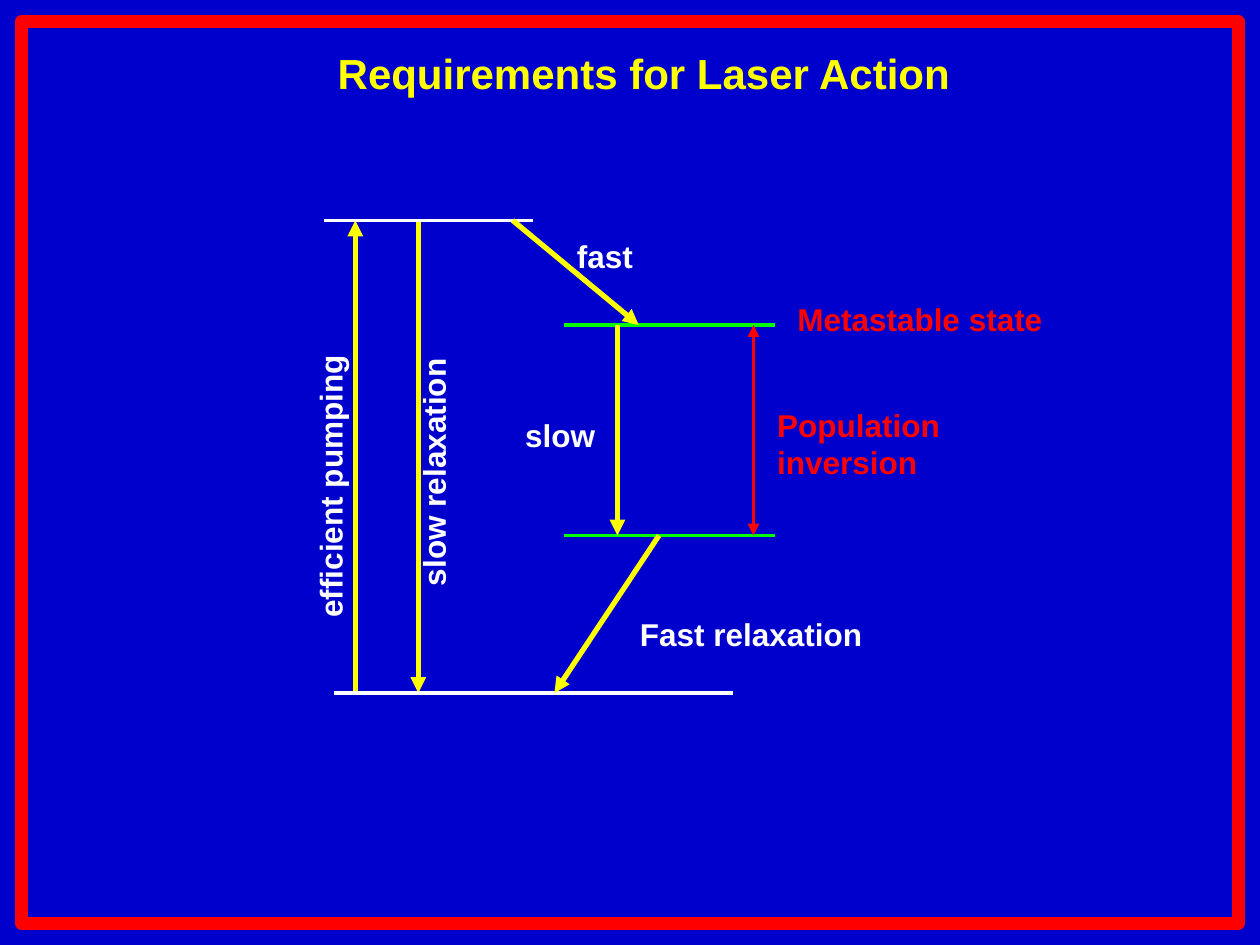
"""Build the slide on the requirements for laser action."""
from dataclasses import dataclass

from pptx import Presentation
from pptx.dml.color import RGBColor
from pptx.enum.shapes import MSO_CONNECTOR, MSO_SHAPE
from pptx.enum.text import MSO_ANCHOR, MSO_AUTO_SIZE, PP_ALIGN
from pptx.oxml.ns import qn
from pptx.util import Inches, Pt
from lxml.etree import SubElement


@dataclass(frozen=True)
class Theme:
    """Colours, font and sizes of the slide."""
    background: str = "0000CC"
    accent: str = "FFFF00"
    plain: str = "FFFFFF"
    laser: str = "00FF00"
    alert: str = "FF0000"
    font: str = "Arial"
    title_size: float = 24
    label_size: float = 18
    arrow_width: float = 3
    level_width: float = 2.25
    frame_width: float = 7


def write_text(frame, text, *, font, size, color):
    """Fill a text frame with one bold, left-aligned paragraph."""
    frame.word_wrap = True
    frame.auto_size = MSO_AUTO_SIZE.NONE
    frame.vertical_anchor = MSO_ANCHOR.TOP
    paragraph = frame.paragraphs[0]
    paragraph.alignment = PP_ALIGN.LEFT
    run = paragraph.add_run()
    run.text = text
    run.font.name = font
    run.font.size = Pt(size)
    run.font.bold = True
    run.font.color.rgb = RGBColor.from_string(color)


class EnergyDiagram:
    """Draws the elements of the diagram in one style."""

    def __init__(self, slide, theme):
        """Keep the slide and the theme, and paint the background."""
        self.slide = slide
        self.theme = theme
        fill = slide.background.fill
        fill.solid()
        fill.fore_color.rgb = RGBColor.from_string(theme.background)

    def title(self, text, left, top, width, height):
        """Place and fill the title placeholder."""
        title = self.slide.shapes.title
        title.left, title.top = Inches(left), Inches(top)
        title.width, title.height = Inches(width), Inches(height)
        write_text(title.text_frame, text, font=self.theme.font,
                   size=self.theme.title_size, color=self.theme.accent)

    def label(self, text, left, top, width, height=0.4, color=None, rotation=0):
        """Add a text label."""
        label = self.slide.shapes.add_textbox(
            Inches(left), Inches(top), Inches(width), Inches(height))
        label.rotation = rotation
        write_text(label.text_frame, text, font=self.theme.font,
                   size=self.theme.label_size, color=color or self.theme.plain)

    def line(self, start, end, color, width, heads=()):
        """Add a straight line with triangles at the named ends."""
        line = self.slide.shapes.add_connector(
            MSO_CONNECTOR.STRAIGHT, *map(Inches, start + end))
        line.line.color.rgb = RGBColor.from_string(color)
        line.line.width = Pt(width)
        properties = line.line._get_or_add_ln()
        for head in heads:
            SubElement(properties, qn(f"a:{head}"), type="triangle")
        SubElement(line._element.spPr, qn("a:effectLst"))

    def level(self, left, right, height, color):
        """Add a horizontal energy level."""
        self.line((left, height), (right, height), color, self.theme.level_width)

    def transition(self, start, end):
        """Add an arrow from one level to another."""
        self.line(start, end, self.theme.accent, self.theme.arrow_width, ("tailEnd",))

    def frame(self, margin, page_width, page_height):
        """Add the outline around the page."""
        border = self.slide.shapes.add_shape(
            MSO_SHAPE.RECTANGLE, Inches(margin), Inches(margin),
            Inches(page_width - 2 * margin), Inches(page_height - 2 * margin))
        border.shadow.inherit = False
        border.fill.background()
        border.line.color.rgb = RGBColor.from_string(self.theme.alert)
        border.line.width = Pt(self.theme.frame_width)


def main():
    """Build and save the slide."""
    page_width, page_height = 10, 7.5
    presentation = Presentation()
    presentation.slide_width = Inches(page_width)
    presentation.slide_height = Inches(page_height)
    slide = presentation.slides.add_slide(presentation.slide_layouts[5])
    theme = Theme()
    diagram = EnergyDiagram(slide, theme)
    diagram.title("Requirements for Laser Action", 2.58, 0.33, 5.33, 0.5)

    pumped, metastable, lower, ground = 1.75, 2.58, 4.25, 5.5
    diagram.transition((2.82, ground), (2.82, pumped))
    diagram.transition((3.32, pumped), (3.32, ground))
    for left, right, height, color in (
        (2.65, 5.82, ground, theme.plain),
        (2.57, 4.23, pumped, theme.plain),
        (4.48, 6.15, metastable, theme.laser),
        (4.48, 6.15, lower, theme.laser),
    ):
        diagram.level(left, right, height, color)
    diagram.transition((4.07, pumped), (5.07, metastable))
    diagram.transition((4.9, metastable), (4.9, lower))
    diagram.transition((5.23, lower), (4.4, ground))
    diagram.line((5.98, metastable), (5.98, lower), theme.alert,
                 theme.level_width, ("headEnd", "tailEnd"))

    diagram.label("efficient pumping", 1.41, 3.59, 2.42, rotation=270)
    diagram.label("slow relaxation", 2.23, 3.34, 2.42, rotation=270)
    diagram.label("fast", 4.48, 1.83, 0.83)
    diagram.label("slow", 4.07, 3.25, 0.83)
    diagram.label("Fast relaxation", 4.98, 4.83, 2.42)
    diagram.label("Metastable state", 6.23, 2.33, 2.42, color=theme.alert)
    diagram.label("Population inversion", 6.07, 3.17, 1.58, 0.7, color=theme.alert)

    diagram.frame(0.17, page_width, page_height)
    presentation.save("out.pptx")


if __name__ == "__main__":
    main()
